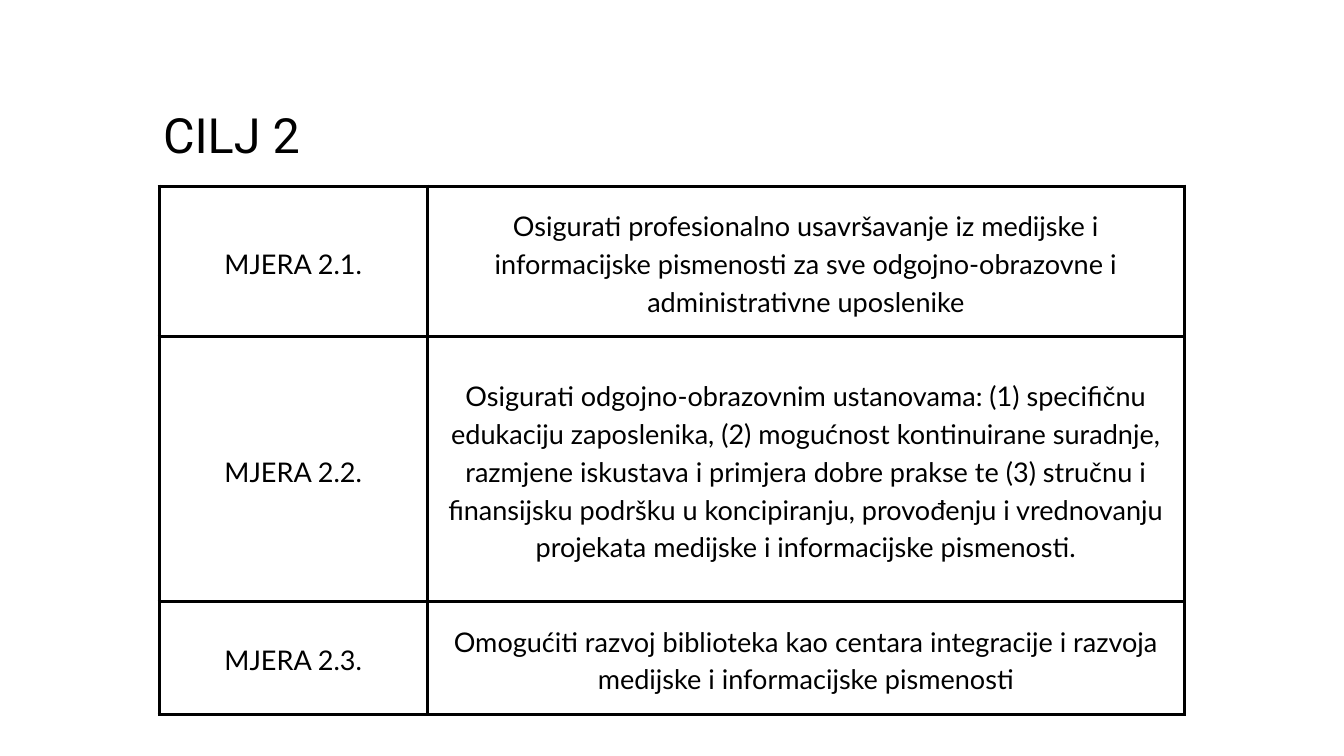
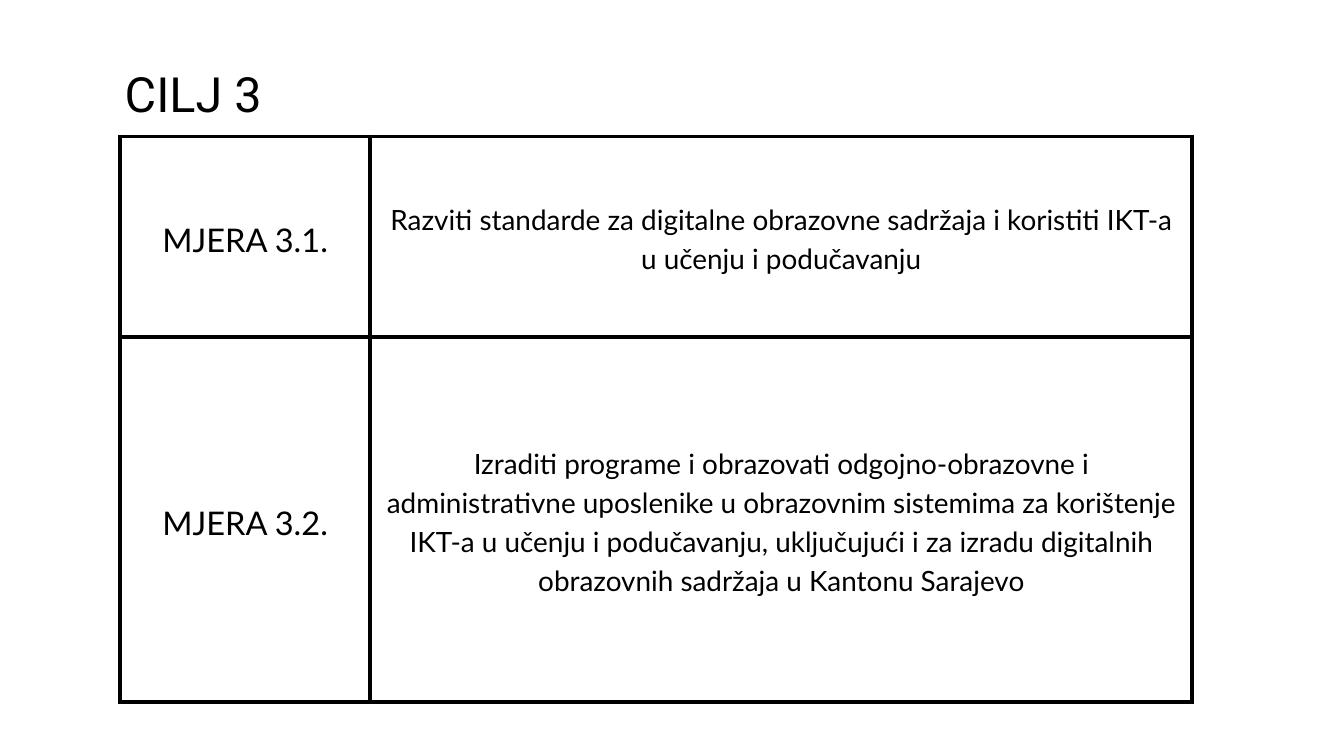
"""Build two slides that list the measures of goals 2 and 3 in bordered tables."""
from lxml import etree
from pptx import Presentation
from pptx.dml.color import RGBColor
from pptx.enum.text import MSO_ANCHOR as ANCHOR, MSO_AUTO_SIZE as AUTO, PP_ALIGN as ALIGN
from pptx.oxml.ns import qn
from pptx.util import Inches, Pt

COLORS = {"ink": "000000", "paper": "FFFFFF"}
FONTS = {"title": "Roboto", "body": "Lato"}
TITLE_SIZE, TITLE_HEIGHT = 52, 0.97
LEADING = 1.4
CELL_MARGIN = 0.21
SIDES = ("left", "top", "right", "bottom")

GOALS = [
    {
        "title": "CILJ 2", "title_top": 1.42, "title_width": 2.15,
        "left": 2.37, "top": 2.77, "border": 3.75,
        "cols": (3.99, 11.27), "rows": (2.24, 3.94, 1.68), "sizes": (29, 29),
        "measures": [
            ("MJERA 2.1.",
             "Osigurati profesionalno usavršavanje iz medijske i informacijske pismenosti "
             "za sve odgojno-obrazovne i administrativne uposlenike"),
            ("MJERA 2.2.",
             "Osigurati odgojno-obrazovnim ustanovama: (1) specifičnu edukaciju zaposlenika, "
             "(2) mogućnost kontinuirane suradnje, razmjene iskustava i primjera dobre prakse "
             "te (3) stručnu i finansijsku podršku u koncipiranju, provođenju i vrednovanju "
             "projekata medijske i informacijske pismenosti."),
            ("MJERA 2.3.",
             "Omogućiti razvoj biblioteka kao centara integracije i razvoja medijske i "
             "informacijske pismenosti"),
        ],
    },
    {
        "title": "CILJ 3", "title_top": 0.81, "title_width": 2.17,
        "left": 1.79, "top": 2.03, "border": 4.5,
        "cols": (3.72, 12.23), "rows": (2.99, 5.43), "sizes": (34.9, 29.9),
        "measures": [
            ("MJERA 3.1.",
             "Razviti standarde za digitalne obrazovne sadržaja i koristiti IKT-a u učenju "
             "i podučavanju"),
            ("MJERA 3.2.",
             "Izraditi programe i obrazovati odgojno-obrazovne i administrativne uposlenike "
             "u obrazovnim sistemima za korištenje IKT-a u učenju i podučavanju, uključujući "
             "i za izradu digitalnih obrazovnih sadržaja u Kantonu Sarajevo"),
        ],
    },
]


def write(tf, text, font, size):
    p = tf.paragraphs[0]
    p.alignment = ALIGN.CENTER
    p.line_spacing = Pt(size * LEADING)
    r = p.add_run()
    r.text = text
    for name, value in {"name": FONTS[font], "size": Pt(size), "bold": False}.items():
        setattr(r.font, name, value)
    r.font.color.rgb = RGBColor.from_string(COLORS["ink"])


def set_borders(cell, width):
    tc_pr = cell._tc.get_or_add_tcPr()
    for i, tag in enumerate(("a:lnL", "a:lnR", "a:lnT", "a:lnB")):
        ln = etree.Element(qn(tag), w=str(Pt(width)))
        fill = etree.SubElement(ln, qn("a:solidFill"))
        etree.SubElement(fill, qn("a:srgbClr"), val=COLORS["ink"])
        tc_pr.insert(i, ln)


def add_measures(s, goal):
    cols, rows = goal["cols"], goal["rows"]
    box = (goal["left"], goal["top"], sum(cols), sum(rows))
    table = s.shapes.add_table(len(rows), len(cols), *map(Inches, box)).table
    table.first_row = table.horz_banding = False
    for col, width in zip(table.columns, cols):
        col.width = Inches(width)
    for row, height, measure in zip(table.rows, rows, goal["measures"]):
        row.height = Inches(height)
        for cell, text, size in zip(row.cells, measure, goal["sizes"]):
            cell.fill.background()
            cell.vertical_anchor = ANCHOR.MIDDLE
            for side in SIDES:
                setattr(cell, f"margin_{side}", Inches(CELL_MARGIN))
            set_borders(cell, goal["border"])
            write(cell.text_frame, text, "body", size)


def add_title(s, goal):
    box = (goal["left"], goal["title_top"], goal["title_width"], TITLE_HEIGHT)
    tf = s.shapes.add_textbox(*map(Inches, box)).text_frame
    tf.word_wrap = True
    tf.auto_size = AUTO.SHAPE_TO_FIT_TEXT
    for side in SIDES:
        setattr(tf, f"margin_{side}", 0)
    write(tf, goal["title"], "title", TITLE_SIZE)


def main():
    prs = Presentation()
    prs.slide_width, prs.slide_height = Inches(20), Inches(11.25)
    for goal in GOALS:
        s = prs.slides.add_slide(prs.slide_layouts[6])
        s.background.fill.solid()
        s.background.fill.fore_color.rgb = RGBColor.from_string(COLORS["paper"])
        add_measures(s, goal)
        add_title(s, goal)
    prs.save("out.pptx")


if __name__ == "__main__":
    main()
